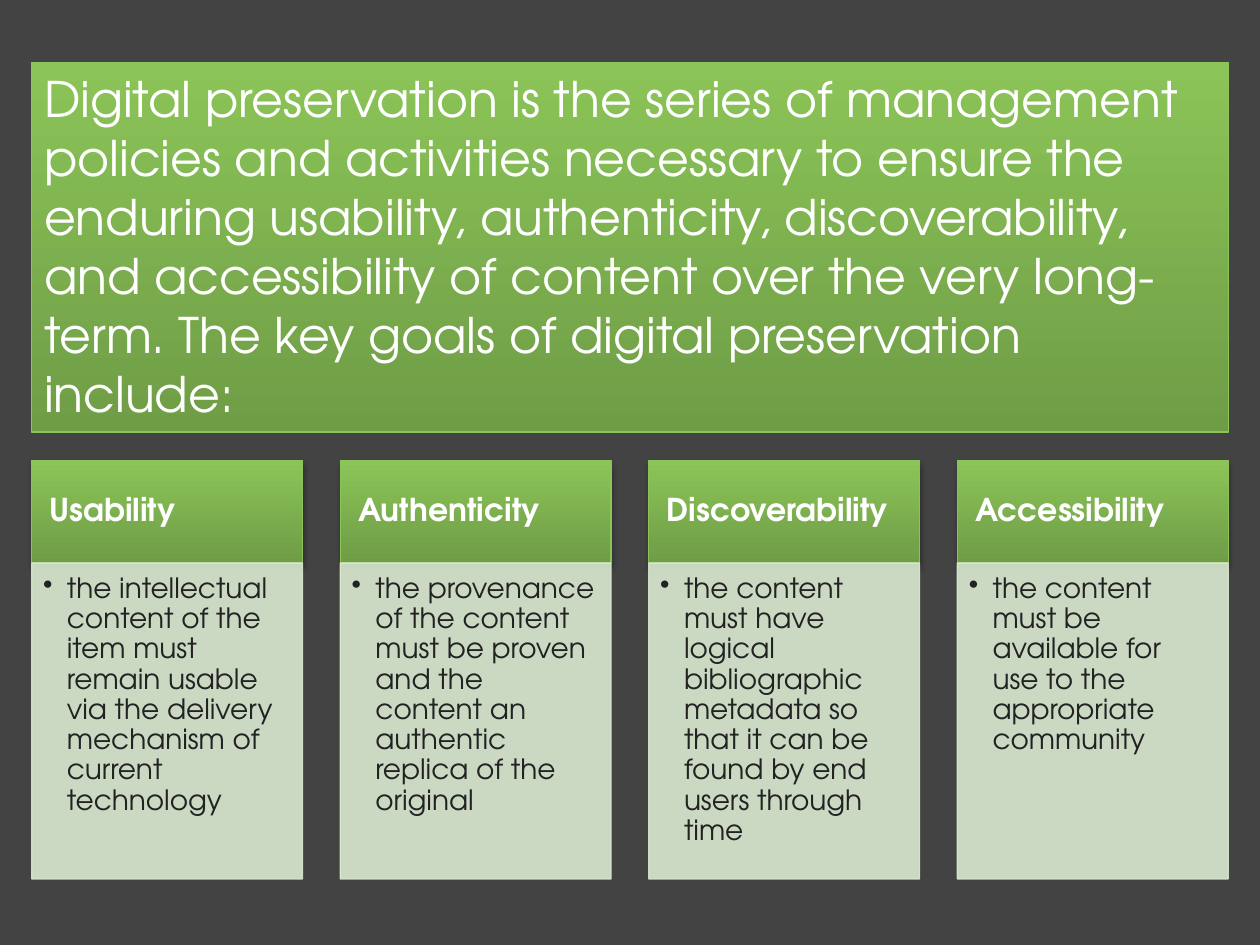
from pptx import Presentation
from pptx.dml.color import RGBColor
from pptx.enum.shapes import MSO_SHAPE
from pptx.enum.text import MSO_ANCHOR, MSO_AUTO_SIZE, PP_ALIGN
from pptx.oxml.ns import qn
from pptx.oxml.xmlchemy import OxmlElement
from pptx.util import Cm, Pt

FONT = "TeX Gyre Adventor"
COLORS = {
    "background": "434343",
    "green": "8BC458",
    "dark green": "6F9D46",
    "pale green": "DAEAD1",
    "white": "FFFFFF",
    "ink": "222222",
    "black": "000000",
}
INTRO = (
    "Digital preservation is the series of management policies and activities "
    "necessary to ensure the enduring usability, authenticity, discoverability, "
    "and accessibility of content over the very long-term. The key goals of "
    "digital preservation include:"
)
GOALS = {
    "Usability": "the intellectual content of the item must remain usable via "
                 "the delivery mechanism of current technology",
    "Authenticity": "the provenance of the content must be proven and the "
                    "content an authentic replica of the original",
    "Discoverability": "the content must have logical bibliographic metadata so "
                       "that it can be found by end users through time",
    "Accessibility": "the content must be available for use to the appropriate "
                     "community",
}
INTRO_FONT = {"size": Pt(28), "name": FONT}
HEAD_FONT = {"size": Pt(18), "name": FONT, "bold": True}
BODY_FONT = {"size": Pt(16), "name": FONT}

SLIDE_W, SLIDE_H = 25.4, 19.05
MARGIN, GAP = 0.64, 0.76
HEAD_H = 2.07


def rgb(name):
    return RGBColor.from_string(COLORS[name])


def add_child(parent, tag, **attrs):
    child = OxmlElement(tag)
    for key, value in attrs.items():
        child.set(key, str(value))
    parent.append(child)
    return child


def add_box(s, box, line):
    sp = s.shapes.add_shape(MSO_SHAPE.RECTANGLE, *(Cm(v) for v in box))
    sp.shadow.inherit = False
    sp.line.color.rgb = rgb(line)
    sp.line.width = Pt(0.75)
    return sp


def add_green_box(s, box):
    sp = add_box(s, box, "green")
    sp.fill.gradient()
    sp.fill.gradient_angle = 270
    for stop, name in zip(sp.fill.gradient_stops, ("green", "dark green")):
        stop.color.rgb = rgb(name)
    return sp


def write(sp, text, font, color, anchor, insets, spacing=1.0):
    """Set one left-aligned paragraph; insets run left, top, right, bottom."""
    tf = sp.text_frame
    tf.word_wrap = True
    tf.vertical_anchor = anchor
    for side, inset in zip(("left", "top", "right", "bottom"), insets):
        setattr(tf, f"margin_{side}", Cm(inset))
    p = tf.paragraphs[0]
    p.alignment = PP_ALIGN.LEFT
    p.line_spacing = spacing
    r = p.add_run()
    r.text = text
    for key, value in font.items():
        setattr(r.font, key, value)
    r.font.color.rgb = rgb(color)
    return p


def add_bullet(p, indent):
    pPr = p._p.get_or_add_pPr()
    pPr.set("marL", str(Cm(indent)))
    pPr.set("indent", str(-Cm(indent)))
    add_child(pPr, "a:buChar", char="•")


def add_soft_shadow(sp):
    effects = sp._element.spPr.find(qn("a:effectLst"))
    shadow = add_child(effects, "a:outerShdw", blurRad=Pt(3), dist=Pt(3),
                       dir=80 * 60000, rotWithShape=0)
    color = add_child(shadow, "a:srgbClr", val=COLORS["black"])
    add_child(color, "a:alpha", val=32000)


def add_intro(s, box):
    sp = add_green_box(s, box)
    write(sp, INTRO, INTRO_FONT, "white", MSO_ANCHOR.TOP,
          (0.25, 0.13, 0.25, 0.13))
    sp.text_frame.auto_size = MSO_AUTO_SIZE.SHAPE_TO_FIT_TEXT


def add_goal(s, box, heading, text):
    left, top, width, height = box
    head = add_green_box(s, (left, top, width, HEAD_H))
    add_soft_shadow(head)
    write(head, heading, HEAD_FONT, "white", MSO_ANCHOR.MIDDLE,
          (0.36, 0.2, 0.36, 0.2), 0.9)

    body = add_box(s, (left, top + HEAD_H, width, height - HEAD_H), "pale green")
    body.fill.solid()
    body.fill.fore_color.rgb = rgb("pale green")
    for color in body._element.spPr.iter(qn("a:srgbClr")):
        add_child(color, "a:alpha", val=90000)
    p = write(body, text, BODY_FONT, "ink", MSO_ANCHOR.TOP,
              (0.23, 0.23, 0.3, 0.36), 0.9)
    add_bullet(p, 0.48)


def add_goals(s, box):
    """Spread the goals over equal columns."""
    left, top, width, height = box
    col_w = (width - GAP * (len(GOALS) - 1)) / len(GOALS)
    for i, (heading, text) in enumerate(GOALS.items()):
        add_goal(s, (left + i * (col_w + GAP), top, col_w, height), heading, text)


def main():
    prs = Presentation()
    prs.slide_width, prs.slide_height = Cm(SLIDE_W), Cm(SLIDE_H)
    s = prs.slides.add_slide(prs.slide_layouts[6])
    s.background.fill.solid()
    s.background.fill.fore_color.rgb = rgb("background")
    width = SLIDE_W - 2 * MARGIN
    add_goals(s, (MARGIN, 9.28, width, 8.44))
    add_intro(s, (MARGIN, 1.26, width, 7.45))
    prs.save("out.pptx")


if __name__ == "__main__":
    main()
